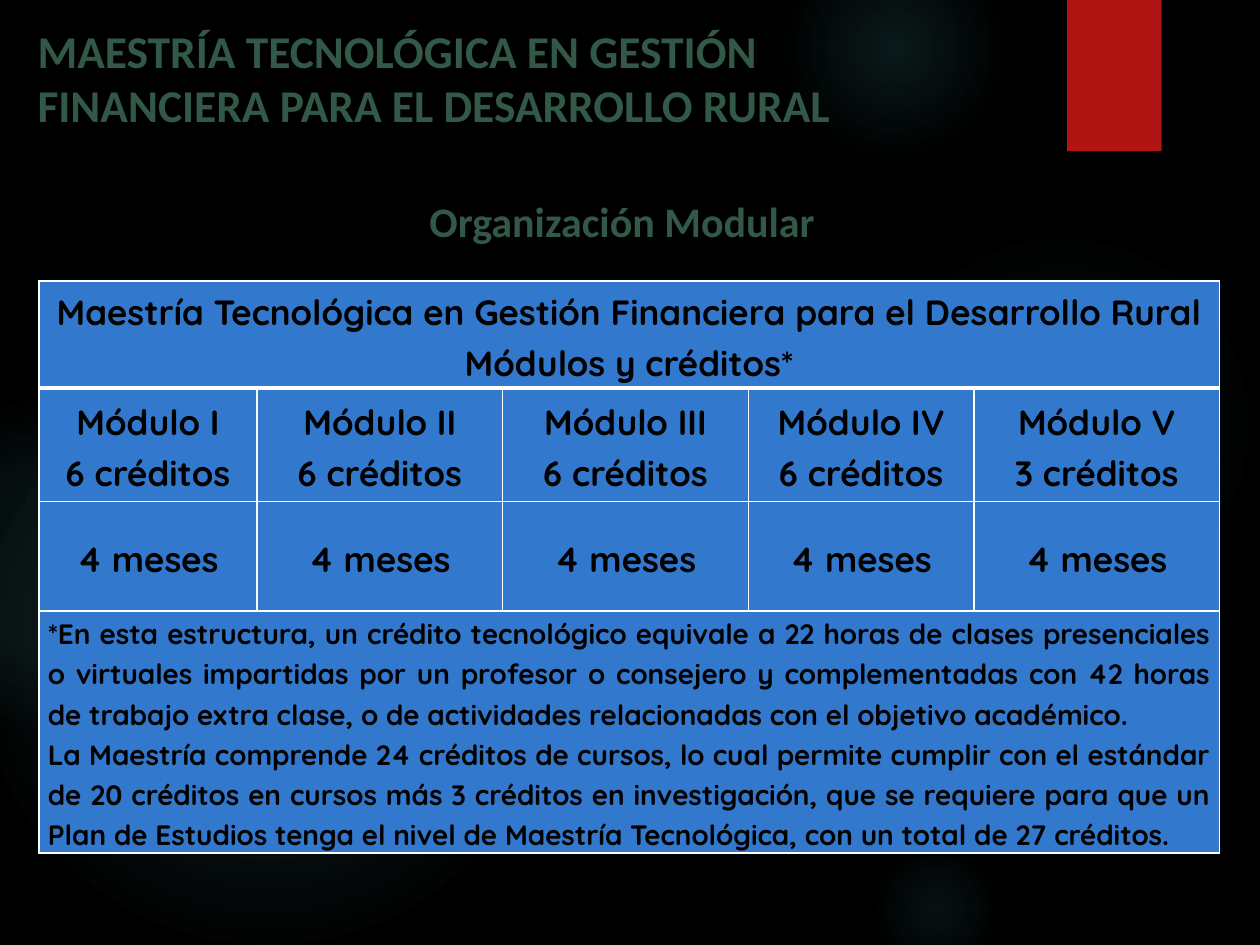
from dataclasses import dataclass

from lxml import etree
from pptx import Presentation
from pptx.dml.color import RGBColor
from pptx.enum.shapes import MSO_SHAPE
from pptx.enum.text import MSO_ANCHOR, PP_ALIGN
from pptx.oxml import parse_xml
from pptx.oxml.ns import nsdecls, qn
from pptx.util import Inches, Pt

CENTER, JUSTIFY, LEFT = PP_ALIGN.CENTER, PP_ALIGN.JUSTIFY, PP_ALIGN.LEFT
MIDDLE = MSO_ANCHOR.MIDDLE
OVAL, RECTANGLE = MSO_SHAPE.OVAL, MSO_SHAPE.RECTANGLE

SLIDE_WIDTH, SLIDE_HEIGHT = 10, 7.5
COLORS = {
    "background": "000000",
    "glow": "50B9C1",
    "ribbon": "B01513",
    "heading": "325948",
    "cell": "3278CC",
    "cell_text": "000000",
    "border": "FFFFFF",
}
COLUMN_WIDTHS = [1.73, 1.95, 1.95, 1.79, 1.95]
ROW_HEIGHTS = [0.85, 0.9, 0.87, 1.92]
CREDITS = {"I": 6, "II": 6, "III": 6, "IV": 6, "V": 3}
TABLE_TITLE = [
    "Maestría Tecnológica en Gestión Financiera para el Desarrollo Rural",
    "Módulos y créditos*",
]
TABLE_NOTES = [
    "*En esta estructura, un crédito tecnológico equivale a 22 horas de clases "
    "presenciales o virtuales impartidas por un profesor o consejero y "
    "complementadas con 42 horas de trabajo extra clase, o de actividades "
    "relacionadas con el objetivo académico.",
    "La Maestría comprende 24 créditos de cursos, lo cual permite cumplir con el "
    "estándar de 20 créditos en cursos más 3 créditos en investigación, que se "
    "requiere para que un Plan de Estudios tenga el nivel de Maestría "
    "Tecnológica, con un total de 27 créditos.",
]


@dataclass
class Glow:
    """A round light: place and diameter in inches, stops as (position, opacity) in percent."""
    left: float
    top: float
    diameter: float
    stops: list[tuple[int, int]]


GLOWS = [
    Glow(6.89, 1.83, 3.08, [(0, 7), (36, 6), (69, 0)]),
    Glow(6.22, -0.5, 1.75, [(0, 14), (36, 7), (73, 0)]),
    Glow(6.89, 6.67, 1.08, [(0, 9), (36, 5), (66, 0)]),
    Glow(-0.17, 2.92, 4.58, [(0, 11), (36, 10), (75, 0)]),
    Glow(-0.92, 3.17, 2.58, [(0, 8), (36, 8), (72, 0)]),
]


def color(name: str) -> RGBColor:
    return RGBColor.from_string(COLORS[name])


def write_text(frame, lines: list[str], *, size: float, font: str, color_name: str,
               align=LEFT, spacing: float = 1.0) -> None:
    frame.word_wrap = True
    for index, line in enumerate(lines):
        paragraph = frame.paragraphs[0] if index == 0 else frame.add_paragraph()
        paragraph.alignment = align
        paragraph.line_spacing = spacing
        run = paragraph.add_run()
        run.text = line
        run.font.size = Pt(size)
        run.font.name = font
        run.font.bold = True
        run.font.color.rgb = color(color_name)


def add_plain_shape(slide, kind, left: float, top: float, width: float, height: float):
    shape = slide.shapes.add_shape(
        kind, Inches(left), Inches(top), Inches(width), Inches(height))
    shape.shadow.inherit = False
    shape.line.fill.background()
    return shape


def add_glow(slide, glow: Glow) -> None:
    shape = add_plain_shape(slide, OVAL, glow.left, glow.top, glow.diameter, glow.diameter)
    stops = "".join(
        f'<a:gs pos="{position * 1000}"><a:srgbClr val="{COLORS["glow"]}">'
        f'<a:alpha val="{opacity * 1000}"/></a:srgbClr></a:gs>'
        for position, opacity in glow.stops)
    gradient = parse_xml(
        f'<a:gradFill {nsdecls("a")} rotWithShape="1"><a:gsLst>{stops}</a:gsLst>'
        '<a:path path="circle"><a:fillToRect l="50000" t="50000" r="50000" b="50000"/>'
        '</a:path></a:gradFill>')
    shape._element.spPr.find(qn("a:prstGeom")).addnext(gradient)


def add_ribbon(slide) -> None:
    shape = add_plain_shape(slide, RECTANGLE, 8.47, 0, 0.75, 0.16 * SLIDE_HEIGHT)
    shape.fill.solid()
    shape.fill.fore_color.rgb = color("ribbon")
    shape._element.spPr.find(qn("a:effectLst")).append(parse_xml(
        f'<a:outerShdw {nsdecls("a")} blurRad="{Pt(3)}" dist="{Pt(2)}" dir="5400000">'
        '<a:srgbClr val="000000"><a:alpha val="45000"/></a:srgbClr></a:outerShdw>'))


def add_heading(slide, text: str, left: float, top: float, width: float, height: float,
                size: float) -> None:
    box = slide.shapes.add_textbox(
        Inches(left), Inches(top), Inches(width), Inches(height))
    write_text(box.text_frame, [text], size=size, font="Calibri", color_name="heading")


def set_borders(cell, **widths: float) -> None:
    """Draw all four sides 1 point wide, except the sides given by name."""
    properties = cell._tc.get_or_add_tcPr()
    for index, side in enumerate("LRTB"):
        line = etree.Element(qn(f"a:ln{side}"), w=str(Pt(widths.get(side, 1))))
        fill = etree.SubElement(line, qn("a:solidFill"))
        etree.SubElement(fill, qn("a:srgbClr"), val=COLORS["border"])
        properties.insert(index, line)


def fill_cell(cell, lines: list[str], size: float = 20, align=CENTER) -> None:
    write_text(cell.text_frame, lines, size=size, font="Quicksand",
               color_name="cell_text", align=align, spacing=1.15)


def add_module_table(slide) -> None:
    table = slide.shapes.add_table(
        len(ROW_HEIGHTS), len(COLUMN_WIDTHS), Inches(0.31), Inches(2.23),
        Inches(sum(COLUMN_WIDTHS)), Inches(sum(ROW_HEIGHTS))).table
    for column, width in zip(table.columns, COLUMN_WIDTHS):
        column.width = Inches(width)
    for row_index, (row, height) in enumerate(zip(table.rows, ROW_HEIGHTS)):
        row.height = Inches(height)
        for cell in row.cells:
            cell.fill.solid()
            cell.fill.fore_color.rgb = color("cell")
            cell.vertical_anchor = MIDDLE
            cell.margin_left = cell.margin_right = Inches(0.07)
            cell.margin_top = cell.margin_bottom = 0
            set_borders(cell, **{0: {"B": 3}, 1: {"T": 3}}.get(row_index, {}))

    last_row, last_column = len(ROW_HEIGHTS) - 1, len(COLUMN_WIDTHS) - 1
    for row_index in (0, last_row):
        table.cell(row_index, 0).merge(table.cell(row_index, last_column))
    fill_cell(table.cell(0, 0), TABLE_TITLE)
    for column_index, (module, credits) in enumerate(CREDITS.items()):
        fill_cell(table.cell(1, column_index), [f"Módulo {module}", f"{credits} créditos"])
        fill_cell(table.cell(2, column_index), ["4 meses"])
    fill_cell(table.cell(last_row, 0), TABLE_NOTES, size=16, align=JUSTIFY)


def main() -> None:
    presentation = Presentation()
    presentation.slide_width = Inches(SLIDE_WIDTH)
    presentation.slide_height = Inches(SLIDE_HEIGHT)
    slide = presentation.slides.add_slide(presentation.slide_layouts[6])
    slide.background.fill.solid()
    slide.background.fill.fore_color.rgb = color("background")

    for glow in GLOWS:
        add_glow(slide, glow)
    add_ribbon(slide)
    add_heading(slide, "Organización Modular", 3.31, 1.5, 3.45, 0.5, size=24)
    add_heading(slide, "MAESTRÍA TECNOLÓGICA EN GESTIÓN FINANCIERA PARA EL DESARROLLO RURAL",
                0.2, 0.13, 7.17, 1.09, size=26)
    add_module_table(slide)
    presentation.save("out.pptx")


if __name__ == "__main__":
    main()
